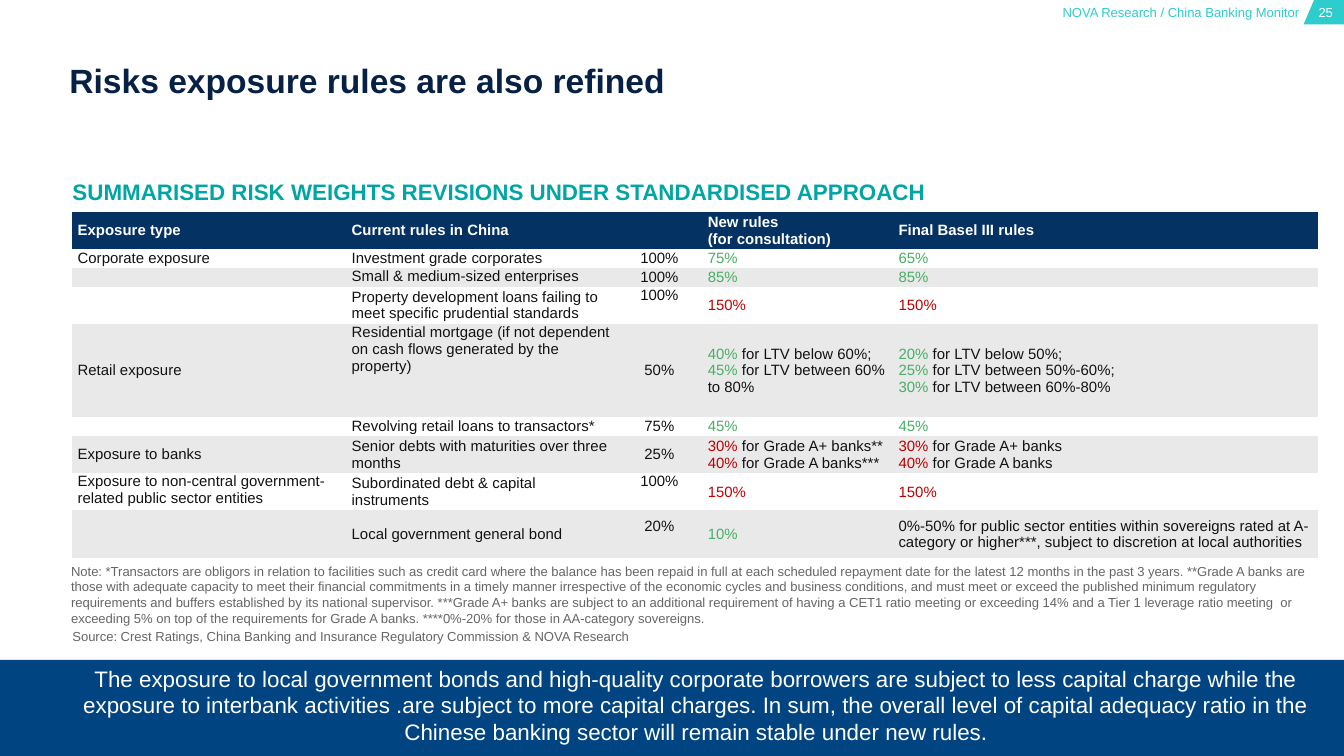
from dataclasses import dataclass

from lxml import etree
from pptx import Presentation
from pptx.dml.color import RGBColor
from pptx.enum.shapes import MSO_SHAPE
from pptx.enum.text import MSO_ANCHOR, PP_ALIGN
from pptx.oxml.ns import qn
from pptx.util import Pt

RECT = MSO_SHAPE.RECTANGLE
TOP, MIDDLE, BOTTOM = MSO_ANCHOR.TOP, MSO_ANCHOR.MIDDLE, MSO_ANCHOR.BOTTOM
LEFT, CENTER, RIGHT = PP_ALIGN.LEFT, PP_ALIGN.CENTER, PP_ALIGN.RIGHT
NO_STYLE = "{2D5ABB26-0587-4C30-8999-92F81FD0307C}"


@dataclass(frozen=True)
class Theme:
    font: str = "Arial"
    white: str = "FFFFFF"
    band: str = "004481"
    aqua: str = "2DCCCD"
    navy: str = "072146"
    teal: str = "02A5A5"
    gray: str = "666666"
    head: str = "043263"
    ink: str = "121212"
    stripe: str = "E9E9E9"
    green: str = "48AE64"
    red: str = "C00000"
    title: float = 18
    lead: float = 12
    cell: float = 8
    note: float = 7


THEME = Theme()

COLS = [149.8, 139, 51.8, 102.2, 224.6]
ROWS = [20, 10, 10, 20, 50, 10, 20, 20, 25.5]
HEAD = ["Exposure type", "Current rules in China", "",
        "New rules\n(for consultation)", "Final Basel III rules"]
# Exposure, current rule, current weight, new rule, final rule, tone of weights
BODY = [
    ("Corporate exposure", "Investment grade corporates", "100%",
     "75%", "65%", THEME.green),
    ("", "Small & medium-sized enterprises", "100%",
     "85%", "85%", THEME.green),
    ("", "Property development loans failing to meet specific prudential "
     "standards", "100%", "150%", "150%", THEME.red),
    ("Retail exposure", "Residential mortgage (if not dependent on cash flows "
     "generated by the property)", "50%",
     "40% for LTV below 60%;\n45% for LTV between 60%\nto 80%",
     "20% for LTV below 50%;\n25% for LTV between 50%-60%;\n"
     "30% for LTV between 60%-80%", THEME.green),
    ("", "Revolving retail loans to transactors*", "75%",
     "45%", "45%", THEME.green),
    ("Exposure to banks", "Senior debts with maturities over three months",
     "25%", "30% for Grade A+ banks**\n40% for Grade A banks***",
     "30% for Grade A+ banks\n40% for Grade A banks", THEME.red),
    ("Exposure to non-central government-related public sector entities",
     "Subordinated debt & capital instruments", "100%",
     "150%", "150%", THEME.red),
    ("", "Local government general bond", "20%", "10%",
     "0%-50% for public sector entities within sovereigns rated at A- "
     "category or higher***, subject to discretion at local authorities",
     THEME.green),
]
# Cells (row, column) set at the top, with their top margin
RAISED = {(2, 1): 0, (3, 2): 0, (4, 1): 0, (7, 0): 0, (7, 2): 0, (8, 2): 4}

NOTE = (
    "Note: *Transactors are obligors in relation to facilities such as credit "
    "card where the balance has been repaid in full at each scheduled "
    "repayment date for the latest 12 months in the past 3 years. **Grade A "
    "banks are those with adequate capacity to meet their financial "
    "commitments in a timely manner irrespective of the economic cycles and "
    "business conditions, and must meet or exceed the published minimum "
    "regulatory requirements and buffers established by its national "
    "supervisor. ***Grade A+ banks are subject to an additional requirement "
    "of having a CET1 ratio meeting or exceeding 14% and a Tier 1 leverage "
    "ratio meeting  or exceeding 5% on top of the requirements for Grade A "
    "banks. ****0%-20% for those in AA-category sovereigns.")
CLAIM = (
    "The exposure to local government bonds and high-quality corporate "
    "borrowers are subject to less capital charge while the exposure to "
    "interbank activities .are subject to more capital charges. In sum, the "
    "overall level of capital adequacy ratio in the Chinese banking sector "
    "will remain stable under new rules.")


def rgb(color):
    return RGBColor.from_string(color)


def set_font(font, size, color, bold=False):
    font.name, font.size, font.bold = THEME.font, Pt(size), bold
    font.color.rgb = rgb(color)


def paint(shape, color):
    shape.fill.solid()
    shape.fill.fore_color.rgb = rgb(color)
    shape.line.fill.background()
    shape.shadow.inherit = False


def add_text(slide, box, text, size, color, bold=False, align=LEFT, anchor=TOP):
    frame = slide.shapes.add_textbox(*map(Pt, box)).text_frame
    frame.word_wrap = True
    frame.vertical_anchor = anchor
    frame.margin_left = frame.margin_right = 0
    frame.margin_top = frame.margin_bottom = 0
    para = frame.paragraphs[0]
    para.text, para.alignment = text, align
    set_font(para.font, size, color, bold)


def add_tab(slide):
    """Draw the slanted page tab in the top corner."""
    form = slide.shapes.build_freeform(Pt(704), 0)
    form.add_line_segments([(Pt(x), Pt(y)) for x, y in
                            [(720, 0), (720, 13), (698.4, 13)]])
    paint(form.convert_to_shape(), THEME.aqua)


def write_lines(para, text, tone):
    """Write broken lines; a leading weight such as 40% takes the tone."""
    for i, line in enumerate(text.split("\n")):
        if i:
            para.add_line_break()
        if tone and line[0].isdigit() and not line.startswith("0%"):
            weight, sign, line = line.partition("%")
            run = para.add_run()
            run.text = weight + sign
            run.font.color.rgb = rgb(tone)
        if line:
            para.add_run().text = line


def fill_cell(cell, row, col, text, tone):
    cell.fill.solid()
    shade = THEME.white if row % 2 else THEME.stripe
    cell.fill.fore_color.rgb = rgb(shade if row else THEME.head)
    cell.vertical_anchor = TOP if (row, col) in RAISED else MIDDLE
    cell.margin_left = Pt(0 if col else 3)
    cell.margin_right = cell.margin_bottom = 0
    cell.margin_top = Pt(RAISED.get((row, col), 0))
    para = cell.text_frame.paragraphs[0]
    para.alignment = CENTER if col == 2 else LEFT
    set_font(para.font, THEME.cell, THEME.ink if row else THEME.white, not row)
    if text:
        write_lines(para, text, tone if col > 2 else None)
    else:
        end = etree.SubElement(para._p, qn("a:endParaRPr"))
        end.set("sz", str(int(THEME.cell * 100)))


def add_rules(slide):
    """Add the table of risk weights."""
    frame = slide.shapes.add_table(len(ROWS), len(COLS), Pt(38.6), Pt(113.6),
                                   Pt(sum(COLS)), Pt(sum(ROWS)))
    table = frame.table
    table._tbl.tblPr.find(qn("a:tableStyleId")).text = NO_STYLE
    table.first_row = table.horz_banding = False
    for col, width in zip(table.columns, COLS):
        col.width = Pt(width)
    for row, height in zip(table.rows, ROWS):
        row.height = Pt(height)
    for r, (*texts, tone) in enumerate([(*HEAD, None), *BODY]):
        for c, text in enumerate(texts):
            fill_cell(table.cell(r, c), r, c, text, tone)
    table.cell(0, 1).merge(table.cell(0, 2))


def main():
    deck = Presentation()
    deck.slide_width, deck.slide_height = Pt(720), Pt(405)
    slide = deck.slides.add_slide(deck.slide_layouts[6])
    t = THEME
    band = slide.shapes.add_shape(RECT, 0, Pt(353.5), Pt(720), Pt(51.5))
    paint(band, t.band)
    add_tab(slide)
    add_text(slide, (702, 2.2, 16.5, 8.6), "25", t.note, t.white, align=CENTER)
    add_text(slide, (498, 2.2, 198, 8.6),
             "NOVA Research / China Banking Monitor", t.note, t.aqua, align=RIGHT)
    add_text(slide, (37.2, 32, 670, 26.6),
             "Risks exposure rules are also refined", t.title, t.navy, True)
    add_text(slide, (39.4, 355.7, 667.4, 44), CLAIM, t.lead, t.white,
             align=CENTER, anchor=MIDDLE)
    add_text(slide, (38.8, 95.4, 655, 14.4),
             "SUMMARISED RISK WEIGHTS REVISIONS UNDER STANDARDISED APPROACH",
             t.lead, t.teal, True)
    add_text(slide, (38.8, 333.4, 429, 11.5),
             "Source: Crest Ratings, China Banking and Insurance Regulatory "
             "Commission & NOVA Research", t.note, t.gray, anchor=BOTTOM)
    add_text(slide, (38.1, 301.7, 669.6, 33.8), NOTE, t.note, t.gray)
    add_rules(slide)
    deck.save("out.pptx")


if __name__ == "__main__":
    main()
